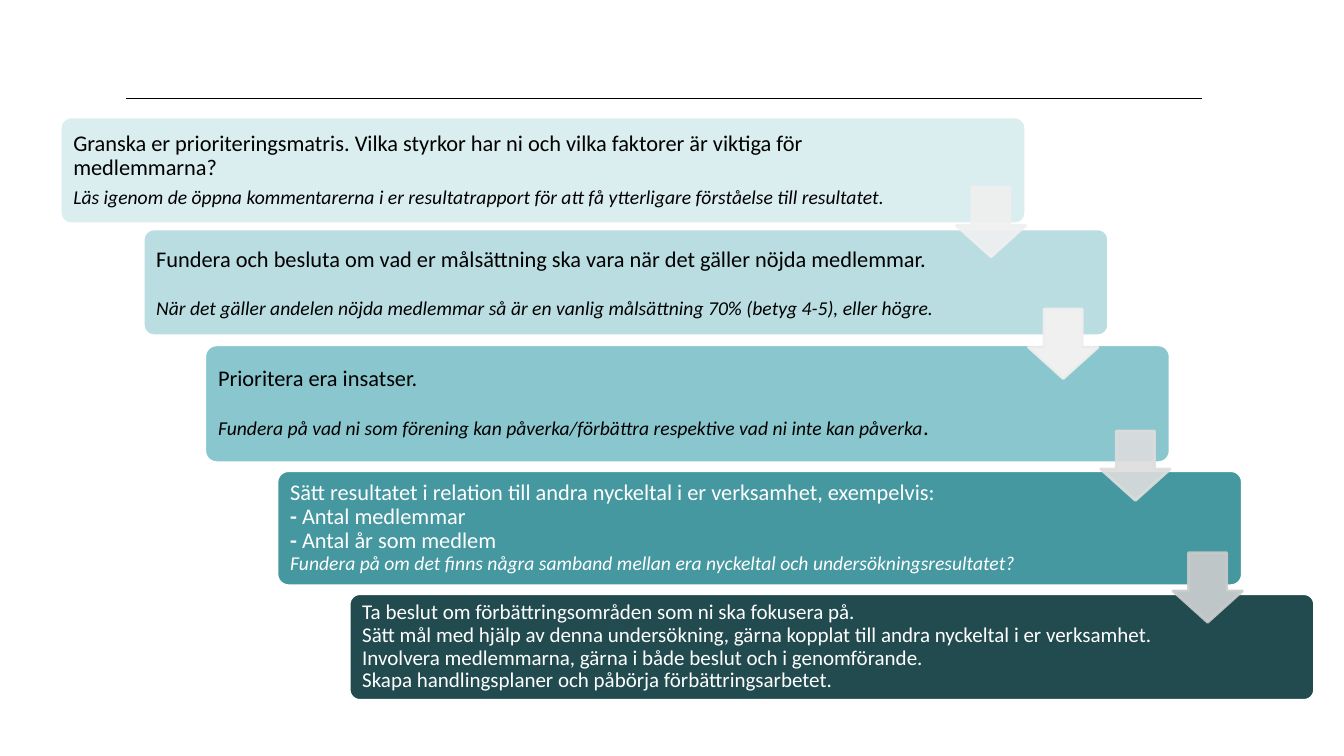
from dataclasses import dataclass

from lxml.etree import SubElement
from pptx import Presentation
from pptx.dml.color import RGBColor
from pptx.enum.shapes import MSO_CONNECTOR as CONN, MSO_SHAPE as SHAPE
from pptx.enum.text import MSO_ANCHOR as ANCHOR, PP_ALIGN as ALIGN
from pptx.oxml.ns import qn
from pptx.util import Cm, Pt


@dataclass(frozen=True)
class Theme:
    """Colours, font and type sizes of the slide."""
    font: str = "Calibri"
    dark: str = "000000"
    light: str = "FFFFFF"
    steps: tuple = ("DAEDEF", "BADDE1", "8AC6CD", "4597A0", "224B50")
    arrows: tuple = (("F0F0F0", 90, "F0F0F0"), ("F0F0F0", 100, "EEEEEE"),
                     ("DDDDDD", 90, "DDDDDD"), ("BEC6C7", 100, "CBCBCB"))
    lead: int = 16
    closing: int = 15
    hint: int = 14
    outline: int = 2
    rule: float = 0.75


THEME = Theme()


def lead(text, **fmt):
    """Return a run in the main size of a step."""
    return text, {"size": THEME.lead, **fmt}


def hint(text):
    """Return an italic run in the smaller size."""
    return text, {"size": THEME.hint, "italic": True}


def closing(text):
    """Return a run in the size of the last step."""
    return text, {"size": THEME.closing}


STEPS = [
    dict(box=(1.52, 2.95, 24.33, 2.69), right=3.33, gap=5.5, lines=[
        [lead("Granska er prioriteringsmatris. Vilka styrkor har ni och vilka "
              "faktorer är viktiga för medlemmarna?")],
        [hint("Läs igenom de öppna kommentarerna i er resultatrapport för att "
              "få ytterligare förståelse till resultatet.")]]),
    dict(box=(3.61, 5.77, 24.33, 2.69), gap=17, spacing=1.0, lines=[
        [lead("Fundera och besluta om vad er målsättning ska vara när det "
              "gäller nöjda medlemmar.")],
        [hint("När det gäller andelen nöjda medlemmar så är en vanlig "
              "målsättning 70% (betyg 4-5), eller högre.")]]),
    dict(box=(5.16, 8.69, 24.33, 2.97), gap=17.5, lines=[
        [lead("Prioritera era insatser.")],
        [hint("Fundera på vad ni som förening kan påverka/förbättra "
              "respektive vad ni inte kan påverka"),
         lead(".", italic=True)]]),
    dict(box=(6.98, 11.86, 24.33, 2.9), color=THEME.light, lines=[
        [lead("Sätt resultatet i relation till andra nyckeltal i er "
              "verksamhet, exempelvis:")],
        [lead("-", bold=True), lead(" Antal medlemmar")],
        [lead("-", bold=True), lead(" Antal år som medlem")],
        [hint("Fundera på om det finns några samband mellan era nyckeltal "
              "och undersökningsresultatet?")]]),
    dict(box=(8.8, 14.96, 24.33, 2.69), color=THEME.light, lines=[
        [closing("Ta beslut om förbättringsområden som ni ska fokusera på.")],
        [closing("Sätt mål med hjälp av denna undersökning, gärna kopplat "
                 "till andra nyckeltal i er verksamhet.")],
        [closing("Involvera medlemmarna, gärna i både beslut och i "
                 "genomförande.")],
        [closing("Skapa handlingsplaner och påbörja förbättringsarbetet.")]]),
]


def add_run(p, text, size, color, bold=False, italic=False):
    """Add formatted text to a paragraph."""
    r = p.add_run()
    r.text = text
    font = r.font
    font.name, font.size = THEME.font, Pt(size)
    font.bold, font.italic = bold, italic
    font.color.rgb = RGBColor.from_string(color)


def set_alpha(fill_owner, percent):
    """Make the solid fill inside an element partly transparent."""
    color = fill_owner.find(qn("a:solidFill")).find(qn("a:srgbClr"))
    SubElement(color, qn("a:alpha")).set("val", str(percent * 1000))


def add_block(slide, kind, box, fill, line, adjustments):
    """Add a filled and outlined shape in a box given in centimetres."""
    sp = slide.shapes.add_shape(kind, *map(Cm, box))
    sp.shadow.inherit = False
    sp.fill.solid()
    sp.fill.fore_color.rgb = RGBColor.from_string(fill)
    sp.line.color.rgb = RGBColor.from_string(line)
    sp.line.width = Pt(THEME.outline)
    for i, value in enumerate(adjustments):
        sp.adjustments[i] = value
    return sp


def add_step(slide, box, fill, lines, color=THEME.dark, right=3.63, gap=0,
             spacing=0.9):
    """Add one card of the staircase with its text."""
    sp = add_block(slide, SHAPE.ROUNDED_RECTANGLE, box, fill, THEME.light, [0.1])
    tf = sp.text_frame
    tf.word_wrap = True
    tf.vertical_anchor = ANCHOR.MIDDLE
    tf.margin_left, tf.margin_right = Cm(0.25), Cm(right)
    tf.margin_top = tf.margin_bottom = Cm(0.2)
    for i, runs in enumerate(lines):
        p = tf.add_paragraph() if i else tf.paragraphs[0]
        p.alignment = ALIGN.LEFT
        p.line_spacing = spacing
        p.space_before = Pt(gap if i else 0)
        for text, fmt in runs:
            add_run(p, text, color=color, **fmt)


def add_arrow(slide, box, fill, alpha, line):
    """Add a down arrow that leads to the next card."""
    sp = add_block(slide, SHAPE.DOWN_ARROW, box, fill, line, [0.55, 0.45])
    props = sp._element.spPr
    set_alpha(props, alpha)
    set_alpha(props.find(qn("a:ln")), 90)


def add_rule(slide, left, top, width):
    """Add the thin line above the staircase."""
    cx = slide.shapes.add_connector(CONN.STRAIGHT, Cm(left), Cm(top),
                                    Cm(left + width), Cm(top))
    cx.line.color.rgb = RGBColor.from_string(THEME.dark)
    cx.line.width = Pt(THEME.rule)
    SubElement(cx._element.spPr, qn("a:effectLst"))


def add_staircase(slide, left, top):
    """Add the cards, then the arrows in even steps from the first one."""
    for step, fill in zip(STEPS, THEME.steps):
        add_step(slide, fill=fill, **step)
    for i, (fill, alpha, line) in enumerate(THEME.arrows):
        box = (left + 1.82 * i, top + 3.07 * i, 1.75, 1.75)
        add_arrow(slide, box, fill, alpha, line)


def main():
    """Build the slide and save it."""
    prs = Presentation()
    prs.slide_width, prs.slide_height = Cm(33.87), Cm(19.05)
    slide = prs.slides.add_slide(prs.slide_layouts[6])
    add_staircase(slide, left=24.1, top=4.72)
    add_rule(slide, left=3.18, top=2.49, width=27.1)
    prs.save("out.pptx")


if __name__ == "__main__":
    main()
